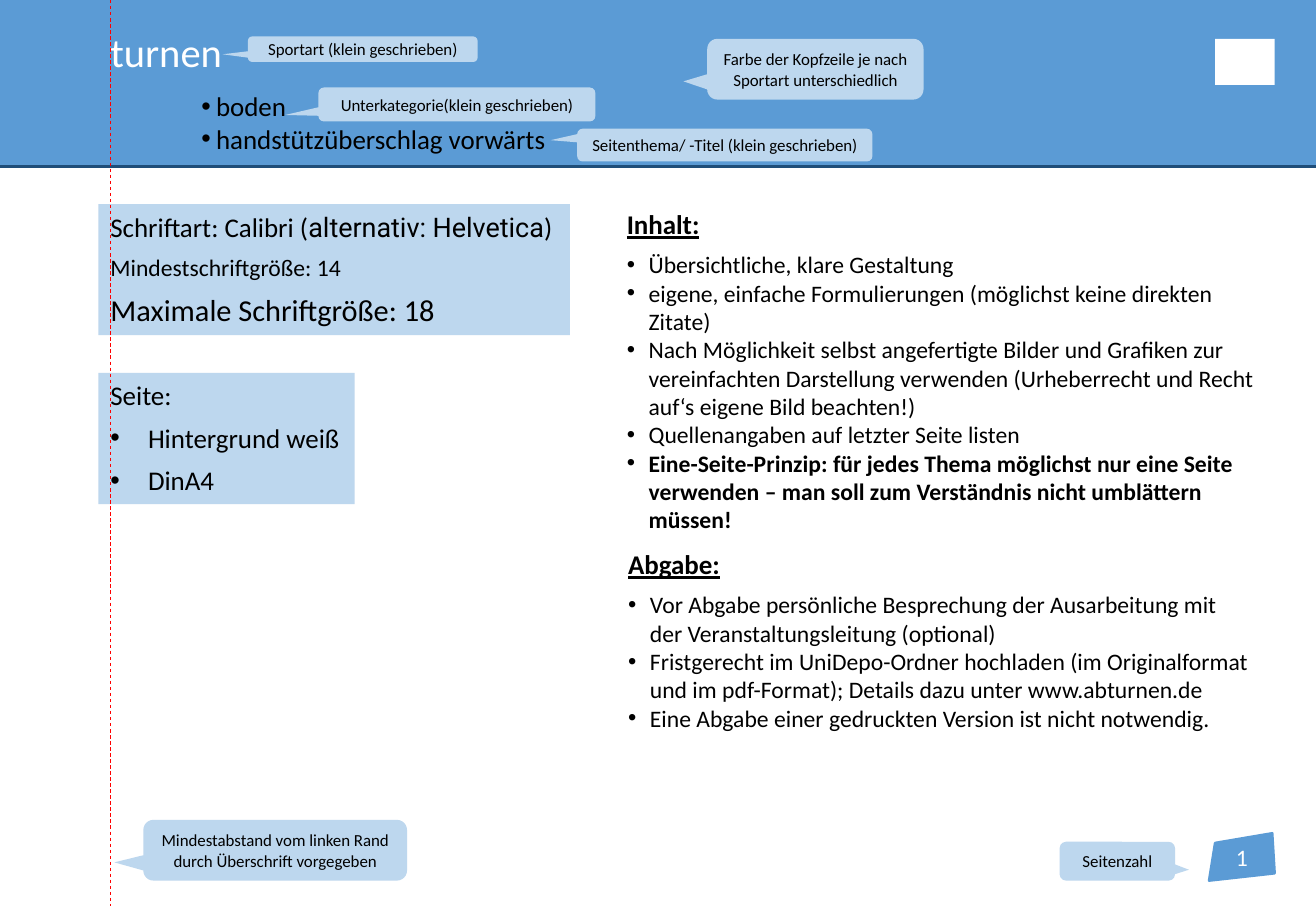
"""Build the slide that explains the layout rules for a gymnastics handout."""
from dataclasses import dataclass

from lxml import etree
from pptx import Presentation, util as u
from pptx.dml.color import RGBColor
from pptx.enum import dml, shapes, text as t
from pptx.oxml.ns import qn

BLUE, PALE, NAVY = "5B9BD5", "BDD7EE", "1F4E79"
WHITE, BLACK, RED = "FFFFFF", "000000", "FF0000"
WIDTH, HEIGHT = 10.83, 7.5
RECT = shapes.MSO_SHAPE.RECTANGLE
BUBBLE = shapes.MSO_SHAPE.ROUNDED_RECTANGULAR_CALLOUT


@dataclass
class Box:
    """Place of an element in inches."""
    left: float
    top: float
    width: float
    height: float

    def spot(self) -> list:
        """Return the place as lengths."""
        return [u.Inches(v) for v in (self.left, self.top, self.width, self.height)]


@dataclass
class Note:
    """Callout with the tip of its tail."""
    text: str
    box: Box
    tip: tuple[float, float]


@dataclass
class Topic:
    """Heading with bullet points; the last may be bold."""
    title: str
    box: Box
    points: list[str]
    strong: bool = False


NOTES = [
    Note("Mindestabstand vom linken Rand durch Überschrift vorgegeben",
         Box(1.18, 6.75, 2.17, 0.5), (-0.61, 0.2)),
    Note("Sportart (klein geschrieben)", Box(2.04, 0.3, 1.89, 0.21), (-0.61, 0.2)),
    Note("Unterkategorie(klein geschrieben)", Box(2.62, 0.72, 2.28, 0.28), (-0.62, 0.31)),
    Note("Seitenthema/ -Titel (klein geschrieben)",
         Box(4.75, 1.06, 2.43, 0.27), (-0.59, -0.15)),
    Note("Farbe der Kopfzeile je nach Sportart unterschiedlich",
         Box(5.82, 0.32, 1.78, 0.5), (-0.61, 0.2)),
    Note("Seitenzahl", Box(8.72, 6.93, 0.95, 0.32), (0.62, 0.22)),
]
TOPICS = [
    Topic("Inhalt:", Box(5.06, 1.66, 5.4, 2.81), [
        "Übersichtliche, klare Gestaltung",
        "eigene, einfache Formulierungen (möglichst keine direkten Zitate)",
        "Nach Möglichkeit selbst angefertigte Bilder und Grafiken zur vereinfachten "
        "Darstellung verwenden (Urheberrecht und Recht auf‘s eigene Bild beachten!)",
        "Quellenangaben auf letzter Seite listen",
        "Eine-Seite-Prinzip: für jedes Thema möglichst nur eine Seite verwenden – "
        "man soll zum Verständnis nicht umblättern müssen!",
    ], strong=True),
    Topic("Abgabe:", Box(5.07, 4.46, 5.31, 1.87), [
        "Vor Abgabe persönliche Besprechung der Ausarbeitung mit der "
        "Veranstaltungsleitung (optional)",
        "Fristgerecht im UniDepo-Ordner hochladen (im Originalformat und im "
        "pdf-Format); Details dazu unter www.abturnen.de",
        "Eine Abgabe einer gedruckten Version ist nicht notwendig.",
    ]),
]


def paint(color: str) -> RGBColor:
    """Turn a hex string into a colour."""
    return RGBColor.from_string(color)


def write(frame, text: str, *, size: float = 16, color: str = BLACK,
          font: str = "Calibri", bold: bool = False, under: bool = False,
          indent: float = 0, after: float = 0, align=t.PP_ALIGN.LEFT,
          join: bool = False) -> None:
    """Add a paragraph, or a further run of the last one if join is set."""
    par = frame.paragraphs[-1]
    if par.runs and not join:
        par = frame.add_paragraph()
    if not join:
        par.alignment = align
        par.space_after = u.Pt(after)
    if indent:
        props = par._p.get_or_add_pPr()
        props.set("marL", str(u.Inches(indent)))
        props.set("indent", str(-u.Inches(indent)))
        etree.SubElement(props, qn("a:buFont")).set("typeface", "Arial")
        etree.SubElement(props, qn("a:buChar")).set("char", "•")
    run = par.add_run()
    run.text = text
    run.font.size = u.Pt(size)
    run.font.name = font
    run.font.bold = bold
    run.font.underline = under
    run.font.color.rgb = paint(color)


def style(shape, fill: str):
    """Give a shape a plain fill without line or shadow."""
    shape.shadow.inherit = False
    shape.fill.solid()
    shape.fill.fore_color.rgb = paint(fill)
    shape.line.fill.background()
    return shape


def block(slide, box: Box, fill: str, kind=RECT):
    """Add a filled preset shape."""
    return style(slide.shapes.add_shape(kind, *box.spot()), fill)


def grow(shape, wrap: bool = False):
    """Let a shape fit its text and return the text frame."""
    frame = shape.text_frame
    frame.word_wrap = wrap
    frame.auto_size = t.MSO_AUTO_SIZE.SHAPE_TO_FIT_TEXT
    frame.vertical_anchor = t.MSO_ANCHOR.TOP
    return frame


def label(slide, box: Box, wrap: bool = False):
    """Add a text box and return its frame."""
    return grow(slide.shapes.add_textbox(*box.spot()), wrap)


def center(shape, text: str, size: float, color: str = BLACK) -> None:
    """Write text in the middle of a shape."""
    frame = shape.text_frame
    frame.word_wrap = True
    frame.vertical_anchor = t.MSO_ANCHOR.MIDDLE
    write(frame, text, size=size, color=color, align=t.PP_ALIGN.CENTER)


def rule(slide, start: tuple, end: tuple, color: str, width: float):
    """Add a straight line."""
    line = slide.shapes.add_connector(
        shapes.MSO_CONNECTOR.STRAIGHT, *[u.Inches(v) for v in start + end])
    line.line.color.rgb = paint(color)
    line.line.width = u.Pt(width)
    etree.SubElement(line._element.spPr, qn("a:effectLst"))
    return line


def header(slide) -> None:
    """Draw the coloured band with its titles."""
    block(slide, Box(0, -0.02, WIDTH, 1.39), BLUE)
    rule(slide, (0, 1.37), (WIDTH, 1.37), NAVY, 1.75)
    block(slide, Box(10, 0.32, 0.49, 0.38), WHITE)
    write(label(slide, Box(0.81, 0.17, 1.13, 0.5)), "turnen", size=24, color=WHITE)
    frame = label(slide, Box(1.56, 0.69, 3.06, 0.64))
    for item in ("boden", "handstützüberschlag vorwärts"):
        write(frame, item, indent=0.12)


def panels(slide) -> None:
    """Draw the two pale panels on the left."""
    page = grow(block(slide, Box(0.81, 3.07, 2.11, 1.08), PALE))
    write(page, "Seite:", after=6)
    for item in ("Hintergrund weiß", "DinA4"):
        write(page, item, indent=0.31, after=6)
    fonts = grow(block(slide, Box(0.81, 1.68, 3.88, 1.08), PALE))
    write(fonts, "Schriftart: Calibri (", after=6)
    write(fonts, "alternativ: Helvetica", font="Roboto", join=True)
    write(fonts, ")", join=True)
    write(fonts, "Mindestschriftgröße: 14", size=14, after=6)
    write(fonts, "Maximale Schriftgröße: 18", size=18, after=6)


def badge(slide) -> None:
    """Draw the slanted page number."""
    pts = [(u.Inches(x), u.Inches(y))
           for x, y in ((10, 6.94), (10.47, 6.86), (10.49, 7.19), (9.95, 7.25))]
    pen = slide.shapes.build_freeform(*pts[0])
    pen.add_line_segments(pts[1:], close=True)
    shape = style(pen.convert_to_shape(), BLUE)
    shape.line.color.rgb = paint(BLUE)
    shape.line.width = u.Pt(1.5)
    center(shape, "1", 14, WHITE)


def main() -> None:
    """Build and save the slide."""
    deck = Presentation()
    deck.slide_width, deck.slide_height = u.Inches(WIDTH), u.Inches(HEIGHT)
    slide = deck.slides.add_slide(deck.slide_layouts[6])
    header(slide)
    panels(slide)
    badge(slide)
    margin = rule(slide, (0.91, 0), (0.91, 7.46), RED, 0.5)
    margin.line.dash_style = dml.MSO_LINE.DASH
    for note in NOTES:
        shape = block(slide, note.box, PALE, BUBBLE)
        shape.adjustments[0], shape.adjustments[1] = note.tip
        center(shape, note.text, 10)
    for topic in TOPICS:
        frame = label(slide, topic.box, wrap=True)
        write(frame, topic.title, bold=True, under=True, after=6)
        for point in topic.points:
            last = point == topic.points[-1]
            write(frame, point, size=14, indent=0.18, bold=topic.strong and last)
    deck.save("out.pptx")


if __name__ == "__main__":
    main()
